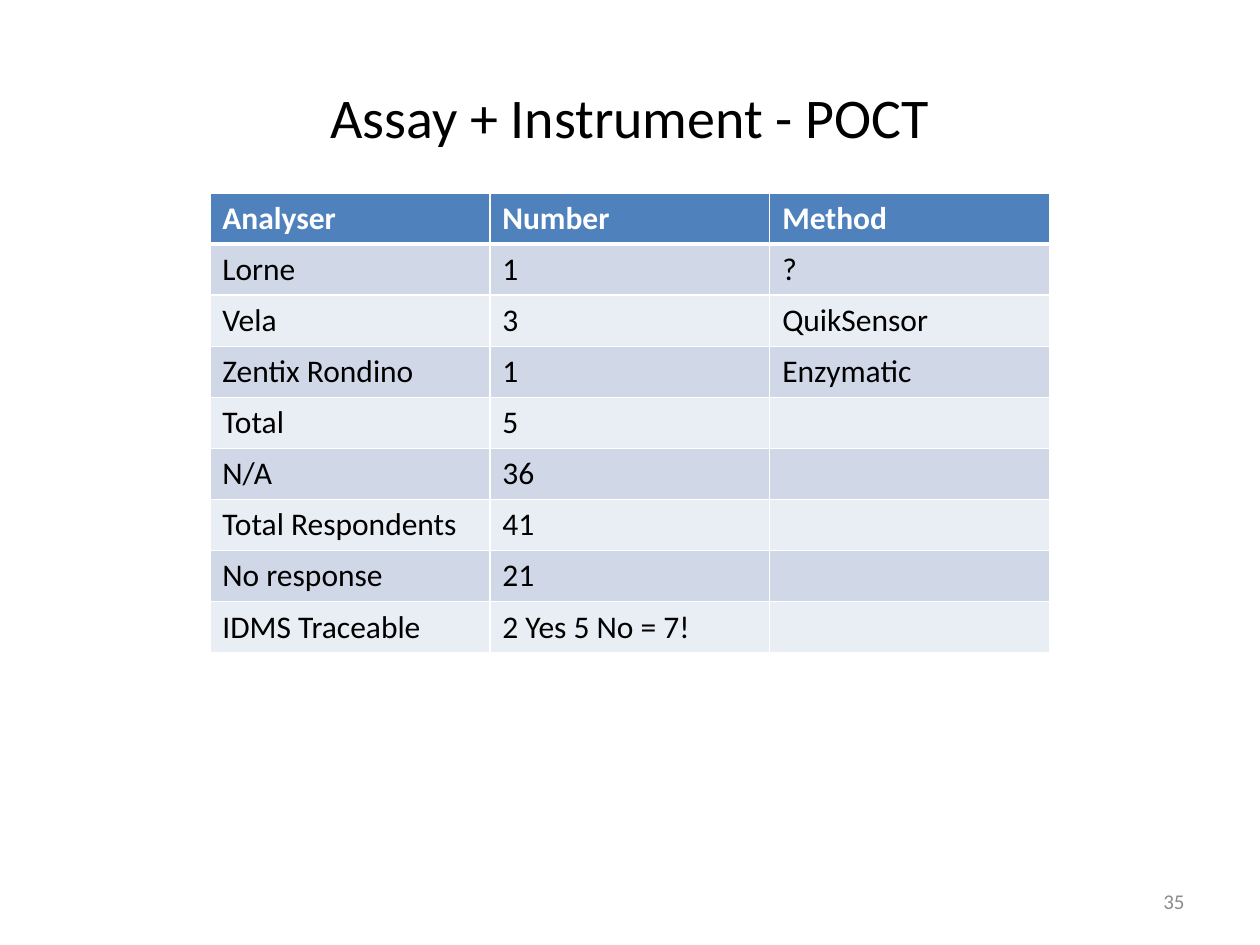
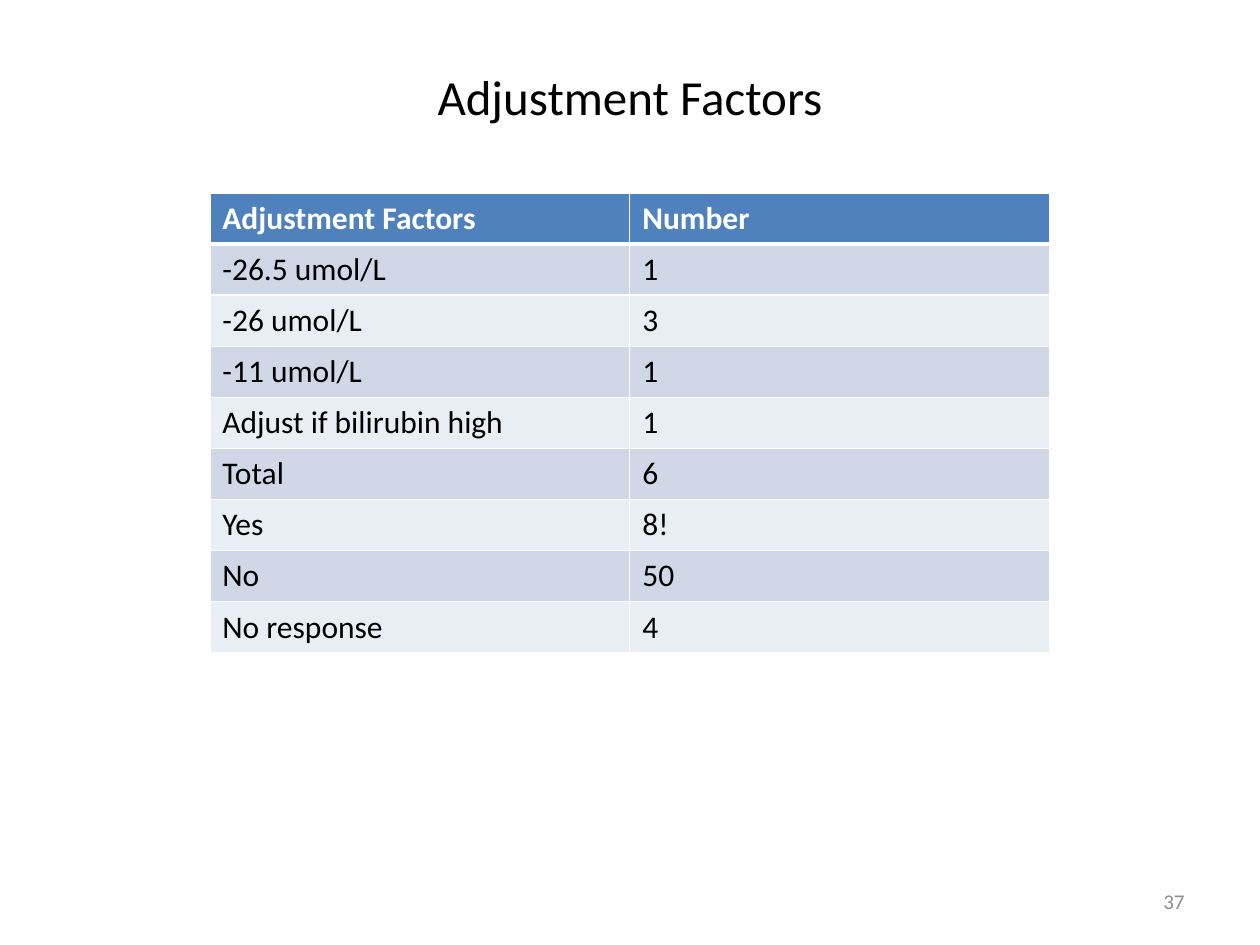
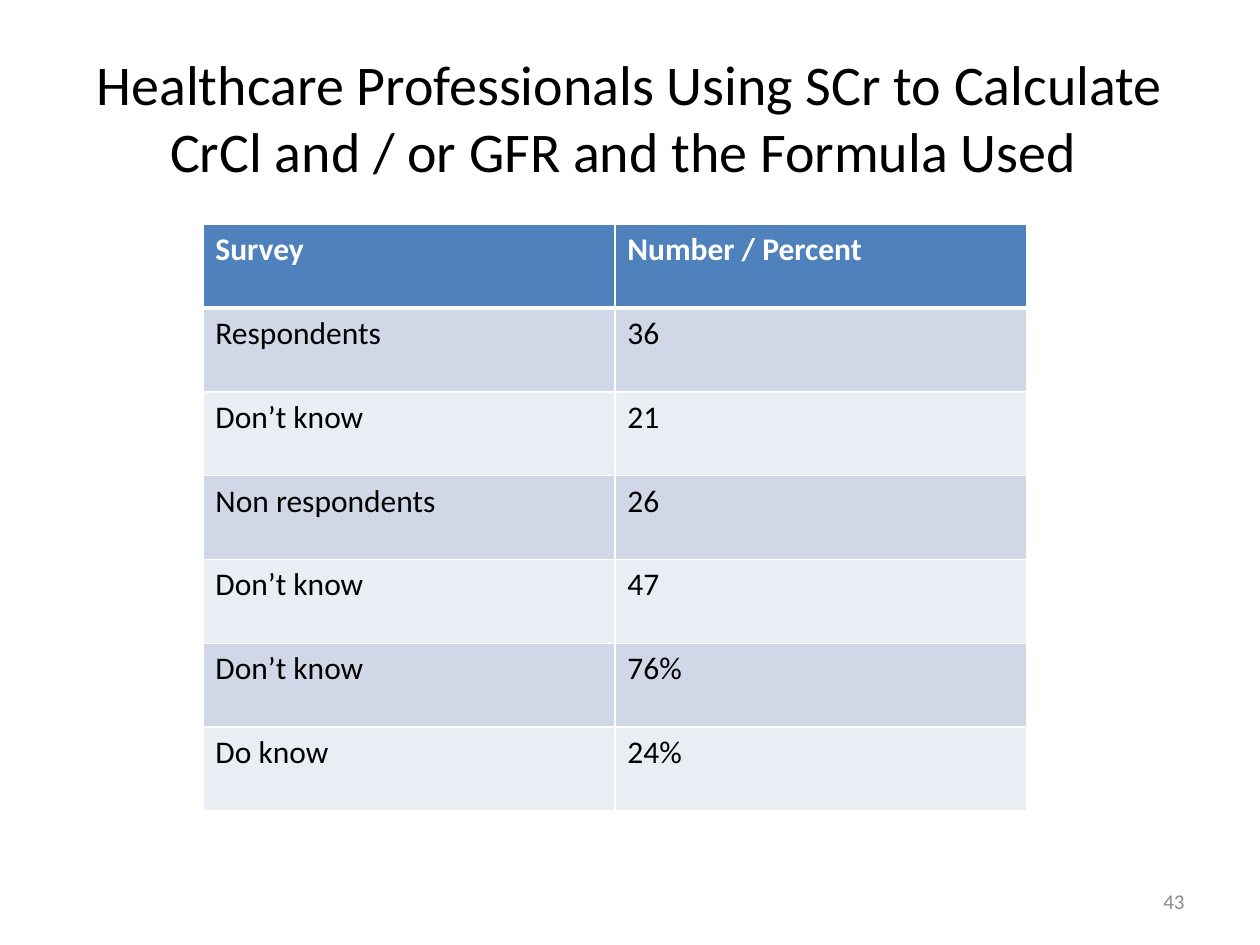
"""Build three survey result slides, each with a title, a table and a number."""
from dataclasses import dataclass

from lxml import etree
from pptx import Presentation
from pptx.dml.color import RGBColor
from pptx.enum.text import MSO_ANCHOR, MSO_AUTO_SIZE, PP_ALIGN
from pptx.oxml.ns import qn
from pptx.util import Cm, Pt

LEFT, CENTER, RIGHT = PP_ALIGN.LEFT, PP_ALIGN.CENTER, PP_ALIGN.RIGHT
MIDDLE = MSO_ANCHOR.MIDDLE
NO_AUTOFIT = MSO_AUTO_SIZE.NONE
TITLE_ONLY = 5


@dataclass(frozen=True)
class Theme:
    """Colours, font and sizes shared by all slides."""
    font: str = "Calibri"
    ink: str = "000000"
    paper: str = "FFFFFF"
    muted: str = "8C8C8C"
    header: str = "4F81BD"
    bands: tuple = ("D0D8E8", "E9EDF4")
    title_size: int = 32
    small_title_size: int = 28
    table_size: int = 18
    number_size: int = 12
    thin_border: int = 1
    header_border: int = 3


THEME = Theme()


@dataclass(frozen=True)
class SurveySlide:
    """Wording and table placement of one slide, with lengths in centimetres."""
    title: str
    number: str
    rows: tuple
    title_height: float = 3.18
    title_size: int = THEME.title_size
    table_left: float = 4.23
    table_top: float = 3.89
    table_width: float = 16.93
    row_height: float = 1.03


SURVEY_SLIDES = (
    SurveySlide(
        title="Assay + Instrument - POCT",
        number="35",
        rows=(
            ("Analyser", "Number", "Method"),
            ("Lorne", "1", "?"),
            ("Vela", "3", "QuikSensor"),
            ("Zentix Rondino", "1", "Enzymatic"),
            ("Total", "5", ""),
            ("N/A", "36", ""),
            ("Total Respondents", "41", ""),
            ("No response", "21", ""),
            ("IDMS Traceable", "2 Yes 5 No = 7!", ""),
        ),
    ),
    SurveySlide(
        title="Adjustment Factors",
        number="37",
        title_height=2.36,
        title_size=THEME.small_title_size,
        rows=(
            ("Adjustment Factors", "Number"),
            ("-26.5 umol/L", "1"),
            ("-26 umol/L", "3"),
            ("-11 umol/L", "1"),
            ("Adjust if bilirubin high", "1"),
            ("Total", "6"),
            ("Yes", "8!"),
            ("No", "50"),
            ("No response", "4"),
        ),
    ),
    SurveySlide(
        title="Healthcare Professionals Using SCr to Calculate "
              "CrCl and / or GFR and the Formula Used ",
        number="43",
        table_left=4.09,
        table_top=4.52,
        table_width=16.61,
        row_height=1.69,
        rows=(
            ("Survey", "Number / Percent"),
            ("Respondents", "36"),
            ("Don’t know", "21"),
            ("Non respondents", "26"),
            ("Don’t know", "47"),
            ("Don’t know", "76%"),
            ("Do know", "24%"),
        ),
    ),
)


def write_text(text_frame, text, *, size, color=THEME.ink, bold=False, align=LEFT):
    """Write one formatted paragraph into a text frame."""
    paragraph = text_frame.paragraphs[0]
    paragraph.alignment = align
    run = paragraph.add_run()
    run.text = text
    run.font.name = THEME.font
    run.font.size = Pt(size)
    run.font.bold = bold
    run.font.color.rgb = RGBColor.from_string(color)


def add_title(slide, text, height, size):
    """Place and fill the title placeholder."""
    title = slide.shapes.title
    title.left, title.top = Cm(1.27), Cm(0.76)
    title.width, title.height = Cm(22.86), Cm(height)
    title.text_frame.auto_size = NO_AUTOFIT
    title.text_frame.vertical_anchor = MIDDLE
    write_text(title.text_frame, text, size=size, align=CENTER)


def add_slide_number(slide, number):
    """Add the muted number at the lower right."""
    box = slide.shapes.add_textbox(Cm(18.2), Cm(17.66), Cm(5.93), Cm(1.01))
    box.text_frame.word_wrap = True
    box.text_frame.vertical_anchor = MIDDLE
    write_text(box.text_frame, number, size=THEME.number_size,
               color=THEME.muted, align=RIGHT)


def set_borders(cell, top, bottom):
    """Draw the four cell borders, with top and bottom widths in points."""
    properties = cell._tc.get_or_add_tcPr()
    sides = {"L": THEME.thin_border, "R": THEME.thin_border, "T": top, "B": bottom}
    for side, width in sides.items():
        line = etree.SubElement(properties, qn(f"a:ln{side}"), w=str(Pt(width)))
        fill = etree.SubElement(line, qn("a:solidFill"))
        etree.SubElement(fill, qn("a:srgbClr"), val=THEME.paper)


def format_cell(cell, text, row_index):
    """Fill, border and write a cell according to its row."""
    is_header = row_index == 0
    set_borders(
        cell,
        top=THEME.header_border if row_index == 1 else THEME.thin_border,
        bottom=THEME.header_border if is_header else THEME.thin_border,
    )
    color = THEME.header if is_header else THEME.bands[(row_index - 1) % 2]
    cell.fill.solid()
    cell.fill.fore_color.rgb = RGBColor.from_string(color)
    if text:
        write_text(cell.text_frame, text, size=THEME.table_size, bold=is_header,
                   color=THEME.paper if is_header else THEME.ink)


def add_survey_table(slide, content):
    """Add a banded table with equal columns and equal rows."""
    row_count, column_count = len(content.rows), len(content.rows[0])
    table = slide.shapes.add_table(
        row_count, column_count, Cm(content.table_left), Cm(content.table_top),
        Cm(content.table_width), Cm(content.row_height * row_count),
    ).table
    for row_index, texts in enumerate(content.rows):
        for column_index, text in enumerate(texts):
            format_cell(table.cell(row_index, column_index), text, row_index)


def main():
    """Build and save the presentation."""
    presentation = Presentation()
    presentation.slide_width, presentation.slide_height = Cm(25.4), Cm(19.05)
    for content in SURVEY_SLIDES:
        slide = presentation.slides.add_slide(presentation.slide_layouts[TITLE_ONLY])
        add_title(slide, content.title, content.title_height, content.title_size)
        add_slide_number(slide, content.number)
        add_survey_table(slide, content)
    presentation.save("out.pptx")


if __name__ == "__main__":
    main()
